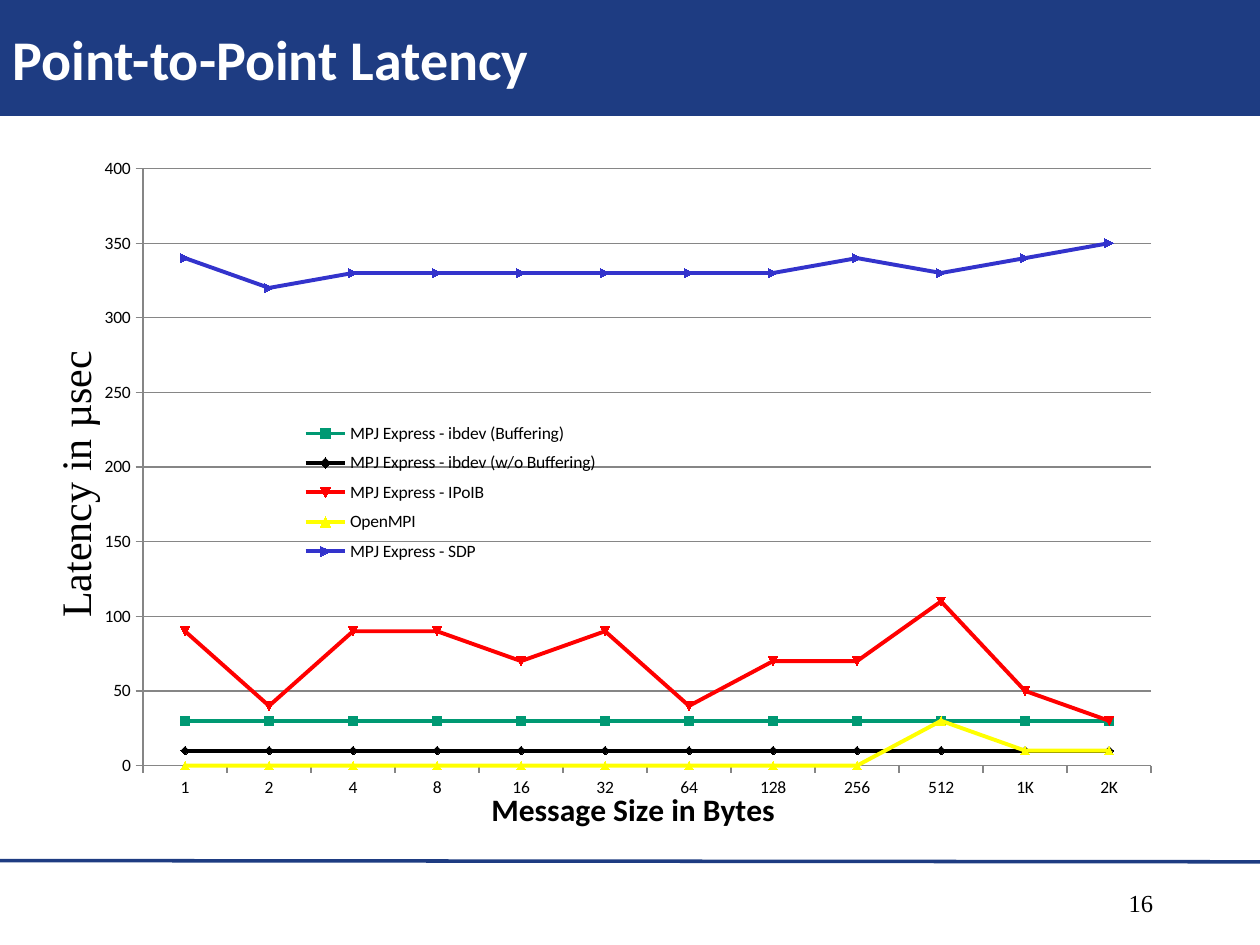
from lxml.etree import SubElement
from pptx import Presentation
from pptx.chart.data import CategoryChartData
from pptx.dml.color import RGBColor
from pptx.enum.chart import XL_CHART_TYPE, XL_LEGEND_POSITION, XL_MARKER_STYLE, XL_TICK_MARK
from pptx.enum.shapes import MSO_CONNECTOR
from pptx.enum.text import MSO_ANCHOR, MSO_AUTO_SIZE, PP_ALIGN
from pptx.oxml.ns import qn
from pptx.util import Inches, Pt

NAVY = RGBColor(0x1E, 0x3C, 0x82)
WHITE = RGBColor(0xFF, 0xFF, 0xFF)
BLACK = RGBColor(0, 0, 0)
GRAY = RGBColor(0x86, 0x86, 0x86)
GREEN = RGBColor(0x00, 0x99, 0x73)
MARKER_GREEN = RGBColor(0x00, 0xB0, 0x50)
RED = RGBColor(0xFF, 0, 0)
YELLOW = RGBColor(0xFF, 0xFF, 0)
BLUE = RGBColor(0x33, 0x33, 0xCC)

MESSAGE_SIZES = ["1", "2", "4", "8", "16", "32", "64", "128", "256", "512", "1K", "2K"]
LATENCIES = [
    ("MPJ Express - ibdev (Buffering)", [30] * 12, GREEN, MARKER_GREEN),
    ("MPJ Express - ibdev (w/o Buffering)", [10] * 12, BLACK, BLACK),
    ("MPJ Express - IPoIB", [90, 40, 90, 90, 70, 90, 40, 70, 70, 110, 50, 30], RED, RED),
    ("OpenMPI", [0] * 9 + [30, 10, 10], YELLOW, YELLOW),
    ("MPJ Express - SDP", [340, 320] + [330] * 6 + [340, 330, 340, 350], BLUE, BLUE),
]


class SlideBuilder:
    """Hold the style and the current slide, and add each kind of element."""

    heading = {"name": "Calibri", "size": Pt(32), "bold": True}
    axis_heading = {"name": "Calibri", "size": Pt(18), "bold": True}
    label = {"name": "Calibri", "size": Pt(10), "bold": False}
    serif = {"name": "Times New Roman"}

    def __init__(self, presentation):
        self.slide = presentation.slides.add_slide(presentation.slide_layouts[5])

    def format_font(self, font, values, color):
        for name, value in values.items():
            setattr(font, name, value)
        font.color.rgb = color

    def place(self, shape, box):
        for name, length in zip(("left", "top", "width", "height"), box):
            setattr(shape, name, Inches(length))

    def add_title(self, text, box):
        title = self.slide.shapes.title
        self.place(title, box)
        title.fill.solid()
        title.fill.fore_color.rgb = NAVY
        frame = title.text_frame
        frame.text = text
        frame.vertical_anchor = MSO_ANCHOR.MIDDLE
        frame.auto_size = MSO_AUTO_SIZE.NONE
        paragraph = frame.paragraphs[0]
        paragraph.alignment = PP_ALIGN.LEFT
        self.format_font(paragraph.font, self.heading, WHITE)

    def add_text(self, text, box, size, alignment=PP_ALIGN.LEFT, rotation=0, wrap=True):
        shape = self.slide.shapes.add_textbox(*map(Inches, box))
        shape.rotation = rotation
        frame = shape.text_frame
        frame.word_wrap = wrap
        frame.text = text
        paragraph = frame.paragraphs[0]
        paragraph.alignment = alignment
        self.format_font(paragraph.font, {**self.serif, "size": Pt(size)}, BLACK)

    def add_line(self, start, end, width):
        line = self.slide.shapes.add_connector(
            MSO_CONNECTOR.STRAIGHT, *map(Inches, (*start, *end)))
        line.line.color.rgb = NAVY
        line.line.width = Pt(width)
        SubElement(line._element.spPr, qn("a:effectLst"))

    def set_layout(self, element, position, values, inner=False):
        for old_layout in element.findall(qn("c:layout")):
            element.remove(old_layout)
        layout = SubElement(element, qn("c:layout"))
        element.insert(position, layout)
        manual = SubElement(layout, qn("c:manualLayout"))
        settings = {"layoutTarget": "inner"} if inner else {}
        settings.update(xMode="edge", yMode="edge")
        settings.update(zip("xywh", values))
        for name, value in settings.items():
            SubElement(manual, qn(f"c:{name}")).set("val", str(value))

    def add_line_chart(self, box, categories, rows, axis_text):
        data = CategoryChartData()
        data.categories = categories
        for name, values, *_ in rows:
            data.add_series(name, values)
        chart = self.slide.shapes.add_chart(
            XL_CHART_TYPE.LINE_MARKERS, *map(Inches, box), data).chart
        self.format_font(chart.font, self.label, BLACK)
        chart.has_title = False
        plot = chart.plots[0]
        plot.vary_by_categories = False
        for series, (*_, color, marker_color) in zip(plot.series, rows):
            series.smooth = False
            series.format.line.color.rgb = color
            series.format.line.width = Pt(2.25)
            series.marker.style = XL_MARKER_STYLE.AUTOMATIC
            series.marker.size = 5
            series.marker.format.fill.solid()
            series.marker.format.fill.fore_color.rgb = marker_color
            series.marker.format.line.color.rgb = color
        self.format_axes(chart, axis_text)
        chart.has_legend = True
        chart.legend.position = XL_LEGEND_POSITION.RIGHT
        chart.legend.include_in_layout = True
        self.format_font(chart.legend.font, self.label, BLACK)
        self.set_layout(chart.legend._element, 1, (0.25, 0.39, 0.28, 0.23))
        plot_area = chart._chartSpace.chart.plotArea
        self.set_layout(plot_area, 0, (0.126, 0.031, 0.865, 0.874), inner=True)

    def format_axes(self, chart, axis_text):
        for axis in (chart.category_axis, chart.value_axis):
            axis.major_tick_mark = XL_TICK_MARK.OUTSIDE
            axis.minor_tick_mark = XL_TICK_MARK.NONE
            axis.format.line.color.rgb = GRAY
            self.format_font(axis.tick_labels.font, self.label, BLACK)
        scale = {"minimum_scale": 0, "maximum_scale": 400, "major_unit": 50}
        for name, value in scale.items():
            setattr(chart.value_axis, name, value)
        chart.value_axis.has_major_gridlines = True
        chart.value_axis.major_gridlines.format.line.color.rgb = GRAY
        title = chart.category_axis.axis_title
        title.text_frame.text = axis_text
        run = title.text_frame.paragraphs[0].runs[0]
        self.format_font(run.font, self.axis_heading, BLACK)
        self.set_layout(title._element, 1, (0.42, 0.93))


def main():
    presentation = Presentation()
    presentation.slide_width = Inches(10)
    presentation.slide_height = Inches(7.5)
    builder = SlideBuilder(presentation)
    builder.add_line((0, 6.83), (10, 6.84), 2)
    builder.add_text("16", (7.17, 7, 2.08, 0.5), 14, PP_ALIGN.RIGHT)
    builder.add_title("Point-to-Point Latency", (0, 0, 10, 0.92))
    builder.add_text("Latency in µsec", (-0.58, 3.58, 2.34, 0.5), 24, rotation=270, wrap=False)
    builder.add_line_chart(
        (-0.03, 1.17, 9.25, 5.49), MESSAGE_SIZES, LATENCIES, "Message Size in Bytes")
    presentation.save("out.pptx")


if __name__ == "__main__":
    main()
